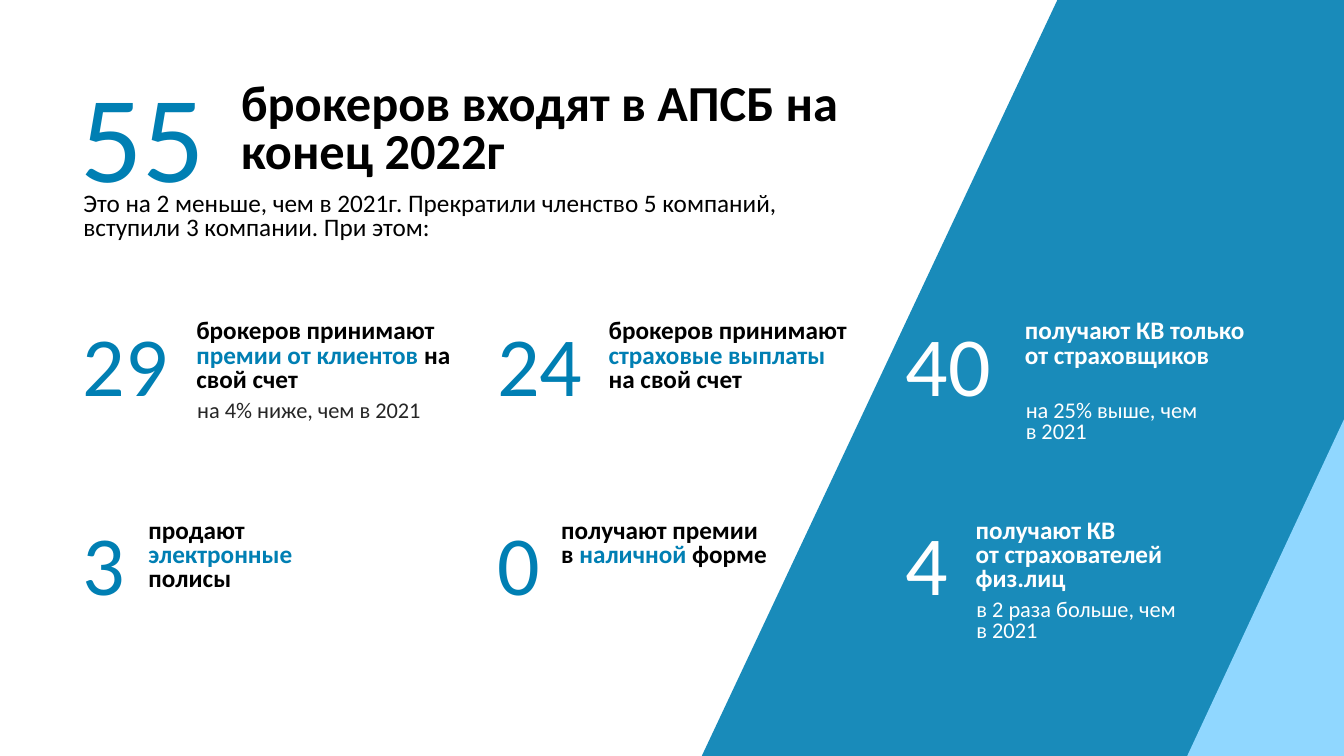
from dataclasses import dataclass

from lxml import etree
from pptx import Presentation
from pptx.dml.color import RGBColor
from pptx.enum.text import MSO_ANCHOR, MSO_AUTO_SIZE, PP_ALIGN
from pptx.oxml.ns import qn
from pptx.util import Pt

TOP, LEFT, NO_FIT = MSO_ANCHOR.TOP, PP_ALIGN.LEFT, MSO_AUTO_SIZE.NONE
TITLE_ONLY = 5


@dataclass(frozen=True)
class Theme:
    font: str = "Calibri"
    blue: str = "007FB3"
    light_blue: str = "90D7FF"
    black: str = "000000"
    gray: str = "262626"
    white: str = "FFFFFF"
    total: int = 88
    title: int = 36
    number: int = 60
    body: int = 18
    note: int = 16


@dataclass(frozen=True)
class Box:
    left: float
    top: float
    width: float
    height: float

    def inner(self, left, top, width, height):
        return Box(self.left + left, self.top + top, width, height)

    def lengths(self):
        return Pt(self.left), Pt(self.top), Pt(self.width), Pt(self.height)


@dataclass(frozen=True)
class Stat:
    number: str
    caption: list  # paragraphs, each a list of (text, is_accent)
    caption_left: float
    caption_width: float
    note: str = ""
    note_width: float = 0


THEME = Theme()


def add_text(page, box, paragraphs, *, size, color, accent=THEME.blue,
             bold=False, spacing=0.8, shape=None):
    """Write paragraphs of (text, is_accent) spans, or one plain string."""
    if isinstance(paragraphs, str):
        paragraphs = [[(paragraphs, False)]]
    if shape is None:
        shape = page.shapes.add_textbox(*box.lengths())
    else:
        shape.left, shape.top, shape.width, shape.height = box.lengths()
    frame = shape.text_frame
    frame.word_wrap = True
    frame.auto_size = NO_FIT
    frame.vertical_anchor = TOP
    for index, spans in enumerate(paragraphs):
        para = frame.add_paragraph() if index else frame.paragraphs[0]
        para.alignment = LEFT
        para.line_spacing = spacing
        para.space_before = Pt(0)
        for text, is_accent in spans:
            span = para.add_run()
            span.text = text
            span.font.name = THEME.font
            span.font.size = Pt(size)
            span.font.bold = bold
            span.font.color.rgb = RGBColor.from_string(accent if is_accent else color)


def add_polygon(page, points, color, opacity=100):
    corners = [(Pt(x), Pt(y)) for x, y in points]
    builder = page.shapes.build_freeform(*corners[0])
    builder.add_line_segments(corners[1:], close=True)
    shape = builder.convert_to_shape()
    shape.shadow.inherit = False
    shape.line.fill.background()
    shape.fill.solid()
    shape.fill.fore_color.rgb = RGBColor.from_string(color)
    if opacity < 100:
        fill = shape.fill._xPr.find(qn("a:solidFill"))
        etree.SubElement(fill[0], qn("a:alpha"), val=str(opacity * 1000))


def add_backdrop(page, box):
    right, bottom = box.left + box.width, box.top + box.height
    add_polygon(page, [(right, box.top), (right, bottom), (box.left + 501.3, bottom),
                       (box.left + 755.3, box.top)], THEME.blue, opacity=90)
    add_polygon(page, [(right, box.top + 299.5), (right, bottom),
                       (box.left + 848, bottom)], THEME.light_blue)


def add_header(page, box):
    add_text(page, box.inner(114.5, 16.5, 460, 79), "брокеров входят в АПСБ на конец 2022г",
             size=THEME.title, color=THEME.black, bold=True, shape=page.shapes.title)
    add_text(page, box.inner(0, 0, 146, 114), "55",
             size=THEME.total, color=THEME.blue, spacing=1)
    add_text(page, box.inner(2, 95.7, 572, 43),
             "Это на 2 меньше, чем в 2021г. Прекратили членство 5 компаний, "
             "вступили 3 компании. При этом:", size=THEME.body, color=THEME.black)


def add_stat(page, box, stat, *, number_color, caption_color, note_color):
    add_text(page, box.inner(0, 0, 90, box.height), stat.number,
             size=THEME.number, color=number_color, spacing=1)
    add_text(page, box.inner(stat.caption_left, 5.8, stat.caption_width, 60), stat.caption,
             size=THEME.body, color=caption_color, bold=True)
    if stat.note:
        add_text(page, box.inner(stat.caption_left + 0.6, 63.2, stat.note_width, 40),
                 stat.note, size=THEME.note, color=note_color)


def add_stat_grid(page, box):
    on_white = dict(number_color=THEME.blue, caption_color=THEME.black,
                    note_color=THEME.gray)
    on_blue = dict(number_color=THEME.white, caption_color=THEME.white,
                   note_color=THEME.white)
    columns = [
        (0, on_white, [
            Stat("29", [[("брокеров принимают ", False), ("премии от клиентов ", True),
                         ("на свой счет", False)]], 81.2, 199.4,
                 "на 4% ниже, чем в 2021", 225),
            Stat("3", [[("продают ", False), ("электронные ", True),
                        ("полисы", False)]], 47, 130),
        ]),
        (296, on_white, [
            Stat("24", [[("брокеров принимают ", False), ("страховые выплаты", True)],
                        [("на свой счет", False)]], 79.7, 211.7),
            Stat("0", [[("получают премии в ", False), ("наличной", True),
                        (" форме", False)]], 45.8, 163.4),
        ]),
        (588, on_blue, [
            Stat("40", [[("получают КВ только от страховщиков", False)]], 85, 175.7,
                 "на 25% выше, чем в 2021", 143.3),
            Stat("4", [[("получают КВ", False)], [("от страхователей физ.лиц", False)]],
                 49.8, 175.7, "в 2 раза больше, чем в 2021", 163.4),
        ]),
    ]
    row_step = 142.4
    for left, colors, stats in columns:
        for row, stat in enumerate(stats):
            add_stat(page, box.inner(left, row * row_step, 260, 80), stat, **colors)


def main():
    deck = Presentation()
    deck.slide_width, deck.slide_height = Pt(960), Pt(540)
    page = deck.slides.add_slide(deck.slide_layouts[TITLE_ONLY])
    add_backdrop(page, Box(0, 0, 960, 540))
    add_header(page, Box(50.4, 38.9, 575, 139))
    add_stat_grid(page, Box(52, 219.6, 850, 250))
    deck.save("out.pptx")


if __name__ == "__main__":
    main()
